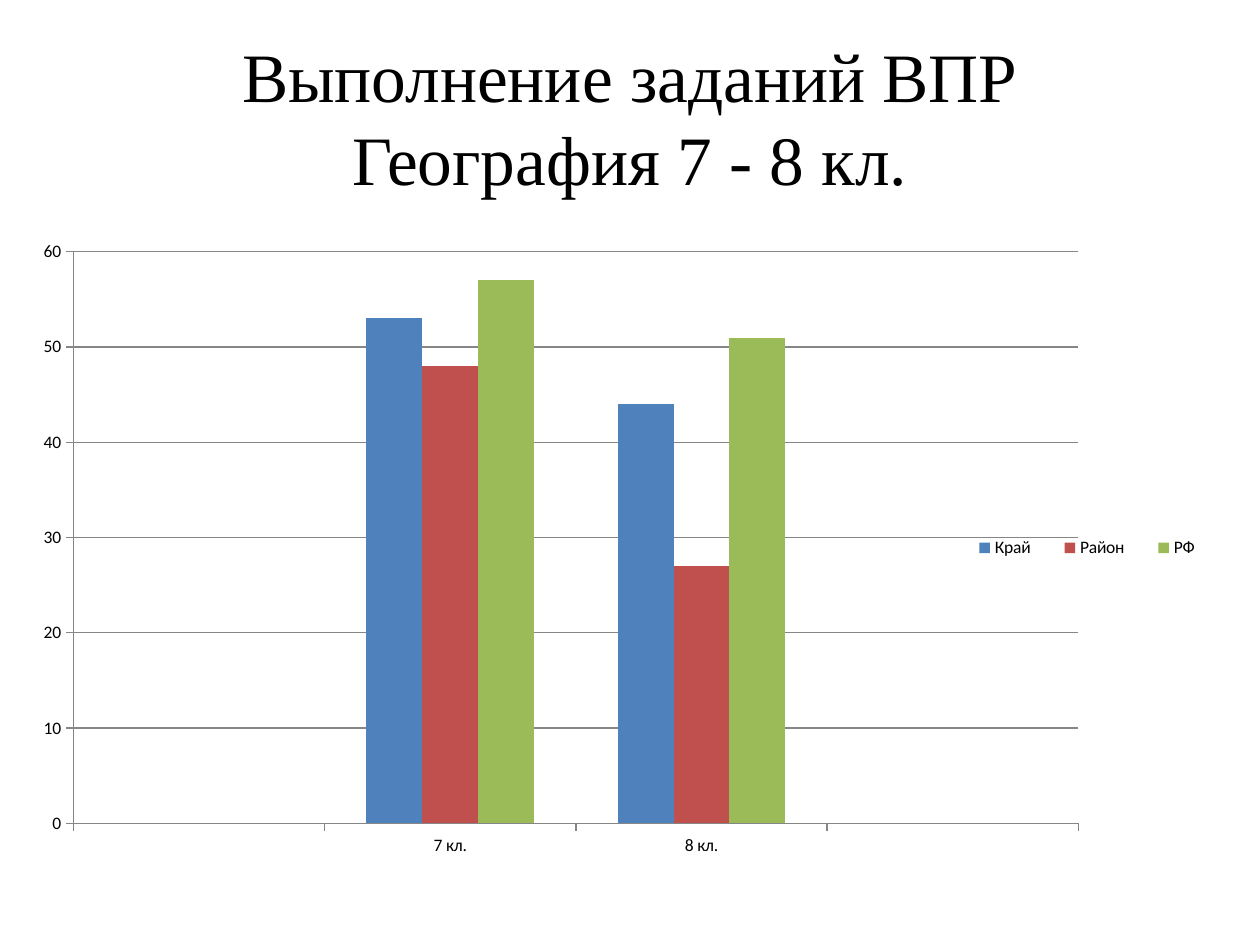
from dataclasses import dataclass

from lxml.etree import SubElement
from pptx import Presentation
from pptx.chart.data import CategoryChartData
from pptx.dml.color import RGBColor
from pptx.enum.chart import XL_CHART_TYPE as ChartType
from pptx.enum.chart import XL_LEGEND_POSITION as LegendPosition
from pptx.enum.chart import XL_TICK_MARK as TickMark
from pptx.enum.text import MSO_ANCHOR as Anchor
from pptx.enum.text import PP_ALIGN as Align
from pptx.oxml.ns import qn
from pptx.util import Pt


@dataclass(frozen=True)
class Theme:
    text: RGBColor = RGBColor.from_string("000000")
    axis: RGBColor = RGBColor.from_string("868686")
    title_font: str = "Times New Roman"
    chart_font: str = "Calibri"
    title_size: float = 39.6
    chart_size: float = 10
    axis_width: float = 0.75


THEME = Theme()
TITLE_LINES = ["Выполнение заданий ВПР", "География 7 - 8 кл."]
GRADES = ["", "7 кл.", "8 кл.", ""]
RESULTS = [
    ("Край", (None, 53, 44, None), "4F81BD"),
    ("Район", (None, 48, 27, None), "C0504D"),
    ("РФ", (None, 57, 51, None), "9BBB59"),
]


def set_layout(parent, position, fractions, inner=False):
    """Place a chart part by fractions (x, y, w, h) of the chart's box."""
    for old in parent.findall(qn("c:layout")):
        parent.remove(old)
    layout = SubElement(parent, qn("c:layout"))
    parent.insert(position, layout)
    manual = SubElement(layout, qn("c:manualLayout"))
    settings = [("layoutTarget", "inner")] if inner else []
    settings += [("xMode", "edge"), ("yMode", "edge")]
    settings += zip("xywh", map(str, fractions))
    for tag, value in settings:
        SubElement(manual, qn(f"c:{tag}")).set("val", value)


def style_line(line):
    line.color.rgb = THEME.axis
    line.width = Pt(THEME.axis_width)


def add_title(slide, left, top, width, height):
    frame = slide.shapes.add_textbox(left, top, width, height).text_frame
    frame.word_wrap = True
    frame.vertical_anchor = Anchor.MIDDLE
    paragraph = frame.paragraphs[0]
    paragraph.alignment = Align.CENTER
    for index, line in enumerate(TITLE_LINES):
        if index:
            paragraph.add_line_break()
        run = paragraph.add_run()
        run.text = line
        run.font.name = THEME.title_font
        run.font.size = Pt(THEME.title_size)
        run.font.color.rgb = THEME.text


def add_results_chart(slide, left, top, width, height):
    data = CategoryChartData()
    data.categories = GRADES
    for region, scores, _ in RESULTS:
        data.add_series(region, scores)
    chart = slide.shapes.add_chart(
        ChartType.COLUMN_CLUSTERED, left, top, width, height, data
    ).chart
    chart.has_title = False
    chart.font.name = THEME.chart_font
    chart.font.size = Pt(THEME.chart_size)
    chart.font.color.rgb = THEME.text

    # Columns
    columns = chart.plots[0]
    columns.vary_by_categories = False
    columns.gap_width = 150
    columns.overlap = 0
    for series, (_, _, color) in zip(columns.series, RESULTS):
        series.format.fill.solid()
        series.format.fill.fore_color.rgb = RGBColor.from_string(color)

    # Axes and gridlines
    scores_axis = chart.value_axis
    scores_axis.minimum_scale, scores_axis.maximum_scale = 0, 60
    scores_axis.major_unit = 10
    scores_axis.has_major_gridlines = True
    style_line(scores_axis.major_gridlines.format.line)
    for axis in (chart.category_axis, scores_axis):
        axis.major_tick_mark = TickMark.OUTSIDE
        axis.minor_tick_mark = TickMark.NONE
        style_line(axis.format.line)

    # Legend in one row, over the right edge of the plot
    chart.has_legend = True
    legend = chart.legend
    legend.position = LegendPosition.RIGHT
    legend.include_in_layout = False
    set_layout(legend._element, 1, (0.75, 0.44, 0.22, 0.05))

    plot_area = columns._element.getparent()
    set_layout(plot_area, 0, (0.039, 0.026, 0.814, 0.848), inner=True)


def main():
    deck = Presentation()
    deck.slide_width, deck.slide_height = Pt(720), Pt(540)
    slide = deck.slides.add_slide(deck.slide_layouts[6])
    add_title(slide, Pt(36), Pt(21.6), Pt(648), Pt(90))
    add_results_chart(slide, Pt(14.4), Pt(133.9), Pt(705.6), Pt(385.2))
    deck.save("out.pptx")


if __name__ == "__main__":
    main()
